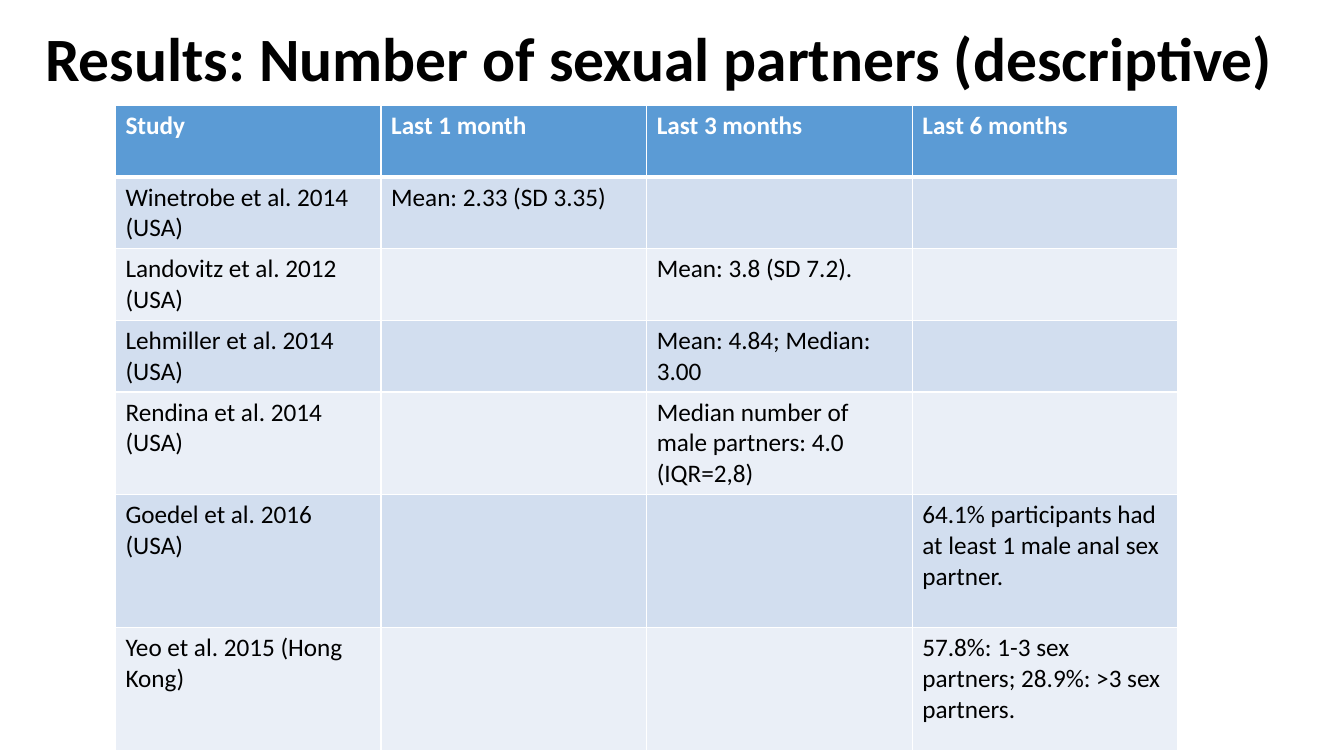
"""Build the slide that tabulates sexual partner counts by study."""
from dataclasses import dataclass

from lxml import etree
from pptx import Presentation
from pptx.dml.color import RGBColor
from pptx.enum.text import MSO_ANCHOR
from pptx.oxml.ns import qn
from pptx.util import Pt

TOP = MSO_ANCHOR.TOP


@dataclass(frozen=True)
class Theme:
    """Hold the colours, font and sizes."""
    font: str = "Calibri"
    title: int = 44
    body: int = 18
    black: str = "000000"
    white: str = "FFFFFF"
    head: str = "5B9BD5"
    bands: tuple[str, str] = ("EAEFF7", "D2DEEF")
    thin: int = 1
    thick: int = 3


@dataclass(frozen=True)
class Row:
    """Hold one table row and its height in points."""
    high: float
    study: str
    month: str = ""
    three: str = ""
    six: str = ""

    def texts(self) -> tuple[str, ...]:
        """Give the cell texts from left to right."""
        return self.study, self.month, self.three, self.six


THEME = Theme()
WIDTH = 189.75
ROWS = (
    Row(51, "Study", "Last 1 month", "Last 3 months", "Last 6 months"),
    Row(51, "Winetrobe et al. 2014 (USA)", month="Mean: 2.33 (SD 3.35)"),
    Row(51, "Landovitz et al. 2012 (USA)", three="Mean: 3.8 (SD 7.2)."),
    Row(51, "Lehmiller et al. 2014 (USA)", three="Mean: 4.84; Median: 3.00"),
    Row(73.5, "Rendina et al. 2014 (USA)",
        three="Median number of male partners: 4.0 (IQR=2,8)"),
    Row(95, "Goedel et al. 2016 (USA)",
        six="64.1% participants had at least 1 male anal sex partner."),
    Row(88, "Yeo et al. 2015 (Hong Kong)",
        six="57.8%: 1-3 sex partners; 28.9%: >3 sex partners."),
)


def write(frame, text: str, size: int, color: str, bold: bool) -> None:
    """Put one formatted run into a text frame."""
    run = frame.paragraphs[0].add_run()
    run.text = text
    form = {"name": THEME.font, "size": Pt(size), "bold": bold}
    for key, value in form.items():
        setattr(run.font, key, value)
    run.font.color.rgb = RGBColor.from_string(color)


def edge(cell, sides: dict[str, int]) -> None:
    """Draw white borders of the given widths on a cell."""
    props = cell._tc.get_or_add_tcPr()
    for side, width in sides.items():
        line = etree.SubElement(props, qn(f"a:ln{side}"), w=str(Pt(width)))
        fill = etree.SubElement(line, qn("a:solidFill"))
        etree.SubElement(fill, qn("a:srgbClr"), val=THEME.white)


def add_grid(slide) -> None:
    """Add the table of studies."""
    count = len(ROWS[0].texts())
    high = sum(row.high for row in ROWS)
    grid = slide.shapes.add_table(
        len(ROWS), count, Pt(82.5), Pt(75.5), Pt(WIDTH * count), Pt(high)).table
    for col in grid.columns:
        col.width = Pt(WIDTH)
    for i, row in enumerate(ROWS):
        grid.rows[i].height = Pt(row.high)
        head = i == 0
        shade = THEME.head if head else THEME.bands[i % 2]
        sides = {"L": THEME.thin, "R": THEME.thin,
                 "T": THEME.thick if i == 1 else THEME.thin,
                 "B": THEME.thick if head else THEME.thin}
        for j, text in enumerate(row.texts()):
            cell = grid.cell(i, j)
            edge(cell, sides)
            cell.fill.solid()
            cell.fill.fore_color.rgb = RGBColor.from_string(shade)
            if text:
                color = THEME.white if head else THEME.black
                write(cell.text_frame, text, THEME.body, color, head)


def add_title(slide) -> None:
    """Add the slide title."""
    box = slide.shapes.add_textbox(Pt(25.2), Pt(16.5), Pt(923), Pt(104.4))
    frame = box.text_frame
    for key, value in {"word_wrap": True, "vertical_anchor": TOP}.items():
        setattr(frame, key, value)
    frame.paragraphs[0].line_spacing = 0.9
    write(frame, "Results: Number of sexual partners (descriptive)",
          THEME.title, THEME.black, True)


def main() -> None:
    """Build and save the deck."""
    deck = Presentation()
    deck.slide_width, deck.slide_height = Pt(960), Pt(540)
    slide = deck.slides.add_slide(deck.slide_layouts[6])
    add_grid(slide)
    add_title(slide)
    deck.save("out.pptx")


if __name__ == "__main__":
    main()
